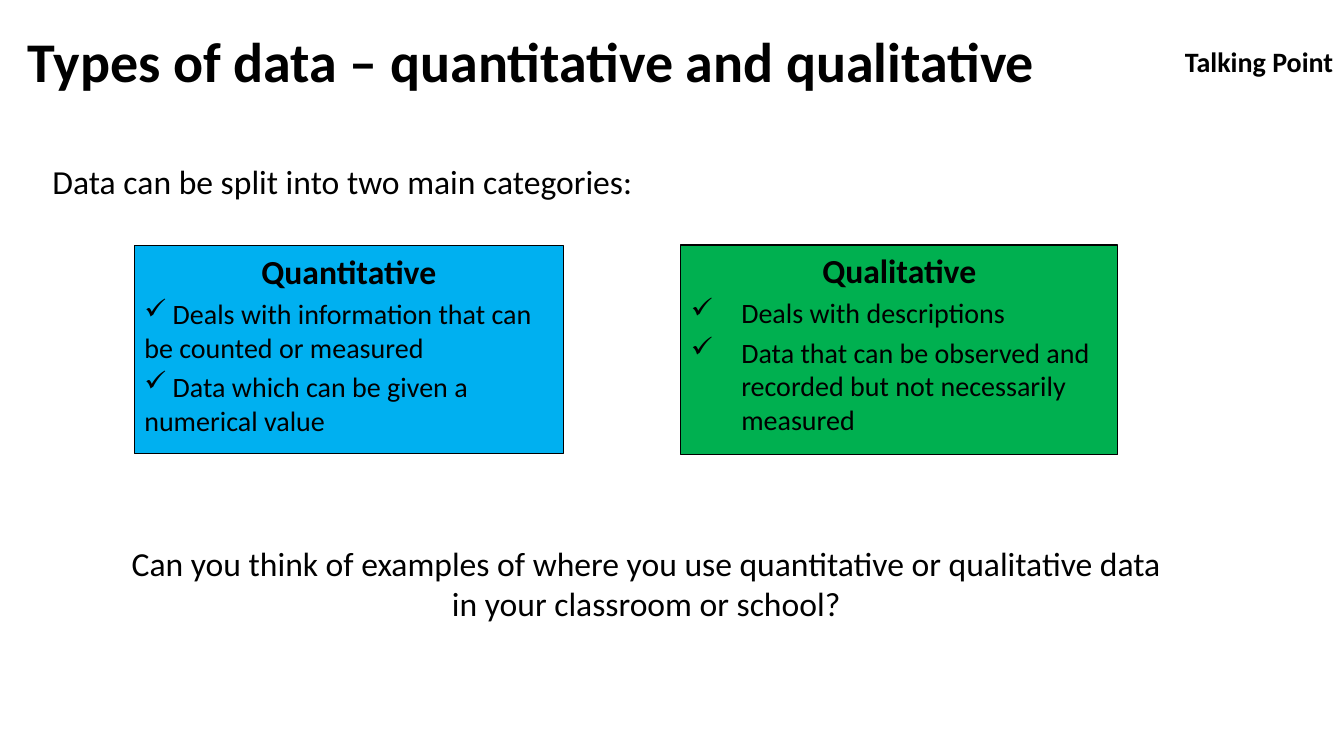
import pptx
import pptx.dml.color
import pptx.enum.shapes
import pptx.enum.text
import pptx.oxml.ns
import pptx.util
import lxml.etree

COLORS = {"text": "000000", "line": "000000", "quantitative": "00B0F0", "qualitative": "00B050"}
ALIGN = pptx.enum.text.PP_ALIGN
ANCHOR = pptx.enum.text.MSO_ANCHOR

prs = pptx.Presentation()
prs.slide_width = pptx.util.Inches(13.33)
prs.slide_height = pptx.util.Inches(7.5)
s = prs.slides.add_slide(prs.slide_layouts[6])

# Grid of 12 columns by 12 rows
COL = prs.slide_width / 12
ROW = prs.slide_height / 12


def place(col, row, cols, rows):
    return int(col * COL), int(row * ROW), int(cols * COL), int(rows * ROW)


def write(p, text, size=24, bold=False, align=ALIGN.LEFT, before=0, bullet=None, indent=0):
    p.alignment = align
    p.space_before = pptx.util.Pt(before)
    r = p.add_run()
    r.text = text
    r.font.name = "Calibri"
    r.font.size = pptx.util.Pt(size)
    r.font.bold = bold
    r.font.color.rgb = pptx.dml.color.RGBColor.from_string(COLORS["text"])
    if bullet:
        pPr = p._p.get_or_add_pPr()
        pPr.set("marL", str(pptx.util.Inches(indent)))
        pPr.set("indent", str(pptx.util.Inches(-indent)))
        lxml.etree.SubElement(pPr, pptx.oxml.ns.qn("a:buChar")).set("char", bullet)


# Title, corner label, introduction and question
for area, text, wrap, anchor, style in [
    ((0.16, 0.13, 9.33, 1.66), "Types of data – quantitative and qualitative", True, ANCHOR.MIDDLE,
     {"size": 40, "bold": True}),
    ((10.49, 0.62, 1.51, 0.7), "Talking Point", False, ANCHOR.TOP, {"size": 20, "bold": True}),
    ((0.38, 2.48, 9.61, 0.8), "Data can be split into two main categories:", True, ANCHOR.TOP, {}),
    ((0.99, 8.54, 9.56, 1.46),
     "Can you think of examples of where you use quantitative or qualitative data "
     "in your classroom or school?", True, ANCHOR.TOP, {"align": ALIGN.CENTER}),
]:
    tf = s.shapes.add_textbox(*place(*area)).text_frame
    tf.word_wrap = wrap
    tf.vertical_anchor = anchor
    write(tf.paragraphs[0], text, **style)

# Category boxes
for area, color, heading, indent, points in [
    ((1.2, 3.9, 3.83, 3.3), "quantitative", "Quantitative", 0,
     [" Deals with information that can be counted or measured",
      " Data which can be given a numerical value"]),
    ((6.08, 3.89, 3.9, 3.33), "qualitative", "Qualitative", 0.5,
     ["Deals with descriptions",
      "Data that can be observed and recorded but not necessarily measured"]),
]:
    sp = s.shapes.add_shape(pptx.enum.shapes.MSO_SHAPE.RECTANGLE, *place(*area))
    sp.shadow.inherit = False
    sp.fill.solid()
    sp.fill.fore_color.rgb = pptx.dml.color.RGBColor.from_string(COLORS[color])
    sp.line.color.rgb = pptx.dml.color.RGBColor.from_string(COLORS["line"])
    sp.line.width = pptx.util.Pt(0.75)
    tf = sp.text_frame
    tf.word_wrap = True
    tf.vertical_anchor = ANCHOR.TOP
    write(tf.paragraphs[0], heading, bold=True, align=ALIGN.CENTER, before=4.8)
    for point in points:
        write(tf.add_paragraph(), point, size=20, before=4, bullet="✓", indent=indent)

prs.save("out.pptx")
